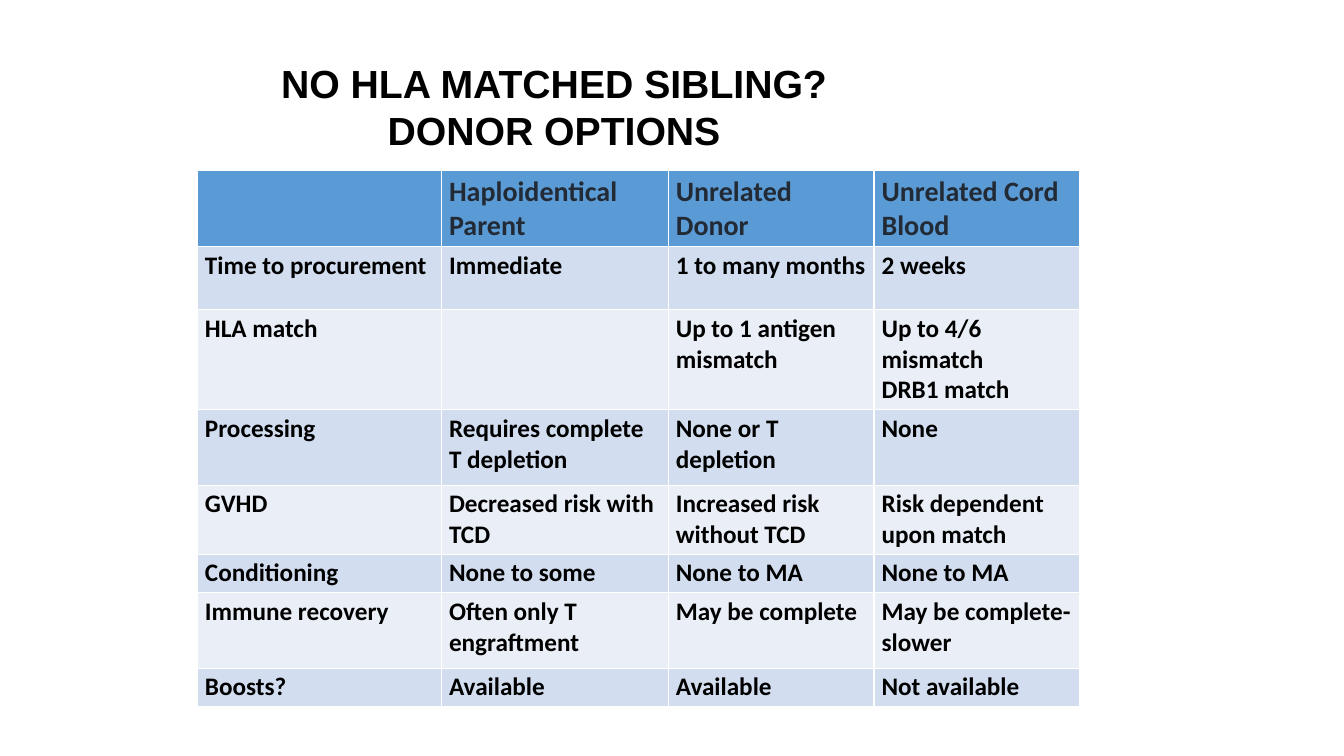
from dataclasses import dataclass

from lxml import etree
from pptx import Presentation
from pptx.dml.color import RGBColor
from pptx.enum.text import MSO_ANCHOR, MSO_AUTO_SIZE, PP_ALIGN
from pptx.oxml.ns import qn
from pptx.util import Pt

CENTER = PP_ALIGN.CENTER
MIDDLE = MSO_ANCHOR.MIDDLE
NO_AUTOFIT = MSO_AUTO_SIZE.NONE
TITLE_ONLY = 5


@dataclass(frozen=True)
class Theme:
    title_font: str = "Arial"
    table_font: str = "Calibri"
    title_size: float = 28
    title_spacing: float = 33.6
    header_size: float = 20
    body_size: float = 18
    text: str = "000000"
    header_text: str = "222A35"
    header_fill: str = "5B9BD5"
    bands: tuple = ("D2DEEF", "EAEFF7")
    border: str = "FFFFFF"
    border_width: float = 1


THEME = Theme()

TITLE = ["NO HLA MATCHED SIBLING?", "DONOR OPTIONS"]
COLUMN_WIDTHS = [174.4, 162, 147, 147]
ROW_HEIGHTS = [46.8, 45, 54, 54, 45, 27, 54, 27]
DONOR_OPTIONS = [
    ["", "Haploidentical Parent", "Unrelated Donor", "Unrelated Cord Blood"],
    ["Time to procurement", "Immediate", "1 to many months", "2 weeks"],
    ["HLA match", "", "Up to 1 antigen mismatch", "Up to 4/6 mismatch\nDRB1 match"],
    ["Processing", "Requires complete T depletion", "None or T depletion", "None"],
    ["GVHD", "Decreased risk with TCD", "Increased risk without TCD",
     "Risk dependent upon match"],
    ["Conditioning", "None to some", "None to MA", "None to MA"],
    ["Immune recovery", "Often only T engraftment", "May be complete",
     "May be complete- slower"],
    ["Boosts?", "Available", "Available", "Not available"],
]


def add_paragraphs(text_frame, lines, font_name, size, color):
    for index, line in enumerate(lines):
        paragraph = text_frame.paragraphs[0] if index == 0 else text_frame.add_paragraph()
        run = paragraph.add_run()
        run.text = line
        run.font.name = font_name
        run.font.size = Pt(size)
        run.font.bold = True
        run.font.color.rgb = RGBColor.from_string(color)


def set_borders(cell):
    properties = cell._tc.get_or_add_tcPr()
    # Borders come before the fill in the cell properties
    for position, tag in enumerate(("a:lnL", "a:lnR", "a:lnT", "a:lnB")):
        line = etree.Element(qn(tag), w=str(Pt(THEME.border_width)))
        fill = etree.SubElement(line, qn("a:solidFill"))
        etree.SubElement(fill, qn("a:srgbClr"), val=THEME.border)
        properties.insert(position, line)


def format_title(slide, left, top, width, height):
    title = slide.shapes.title
    title.left, title.top = Pt(left), Pt(top)
    title.width, title.height = Pt(width), Pt(height)
    text_frame = title.text_frame
    text_frame.word_wrap = True
    text_frame.auto_size = NO_AUTOFIT
    text_frame.vertical_anchor = MIDDLE
    add_paragraphs(text_frame, TITLE, THEME.title_font, THEME.title_size, THEME.text)
    for paragraph in text_frame.paragraphs:
        paragraph.alignment = CENTER
        paragraph.line_spacing = Pt(THEME.title_spacing)


def fill_cell(cell, text, row_index):
    is_header = row_index == 0
    cell.margin_left = cell.margin_right = Pt(5.4)
    cell.margin_top = cell.margin_bottom = Pt(2.7)
    fill_color = THEME.header_fill if is_header else THEME.bands[(row_index - 1) % 2]
    cell.fill.solid()
    cell.fill.fore_color.rgb = RGBColor.from_string(fill_color)
    set_borders(cell)
    if text:
        add_paragraphs(
            cell.text_frame, text.split("\n"), THEME.table_font,
            THEME.header_size if is_header else THEME.body_size,
            THEME.header_text if is_header else THEME.text,
        )


def add_donor_table(slide, left, top):
    frame = slide.shapes.add_table(
        len(DONOR_OPTIONS), len(COLUMN_WIDTHS), Pt(left), Pt(top),
        Pt(sum(COLUMN_WIDTHS)), Pt(sum(ROW_HEIGHTS)),
    )
    table = frame.table
    for column, width in zip(table.columns, COLUMN_WIDTHS):
        column.width = Pt(width)
    for row_index, (row, height) in enumerate(zip(table.rows, ROW_HEIGHTS)):
        row.height = Pt(height)
        for cell, text in zip(row.cells, DONOR_OPTIONS[row_index]):
            fill_cell(cell, text, row_index)


def main():
    presentation = Presentation()
    presentation.slide_width, presentation.slide_height = Pt(960), Pt(540)
    slide = presentation.slides.add_slide(presentation.slide_layouts[TITLE_ONLY])

    # Heading
    format_title(slide, 93, 38.4, 605.5, 75)
    # Comparison of donor sources
    add_donor_table(slide, 141, 121.8)

    presentation.save("out.pptx")


if __name__ == "__main__":
    main()
